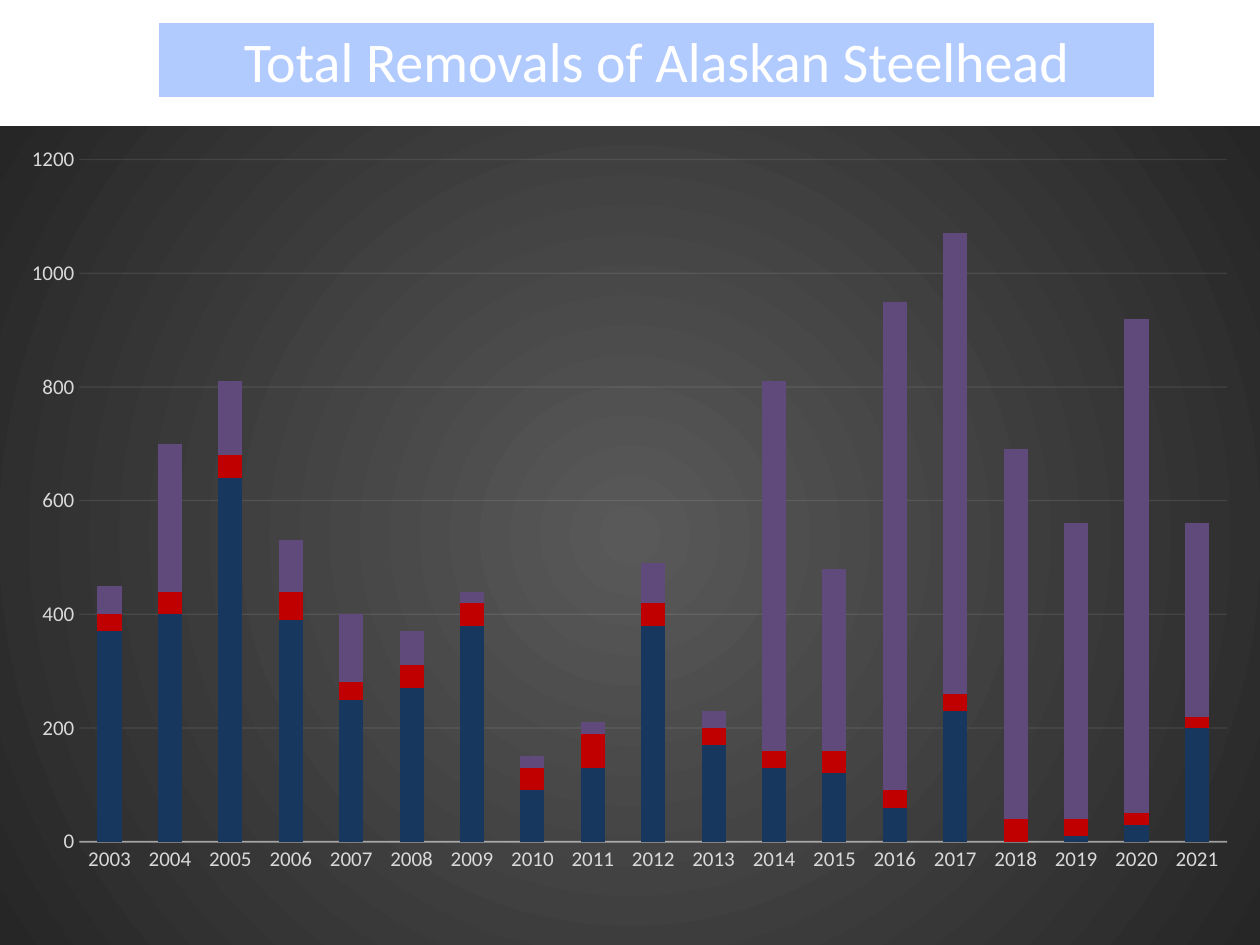
from dataclasses import dataclass

from lxml.etree import SubElement
from pptx import Presentation
from pptx.chart.axis import CategoryAxis, ValueAxis
from pptx.chart.chart import Chart
from pptx.chart.data import CategoryChartData
from pptx.dml.color import RGBColor
from pptx.dml.line import LineFormat
from pptx.enum.chart import XL_CHART_TYPE, XL_TICK_MARK
from pptx.enum.shapes import MSO_SHAPE
from pptx.enum.text import MSO_ANCHOR, PP_ALIGN
from pptx.oxml import parse_xml
from pptx.oxml.ns import nsdecls, qn
from pptx.slide import Slide
from pptx.util import Cm, Pt


@dataclass(frozen=True)
class Theme:
    font: str = "Calibri"
    title_size: float = 32
    axis_size: float = 12
    title_text: str = "FFFFFF"
    title_fill: str = "6699FF"
    axis_text: str = "D9D9D9"
    axis_line: str = "F2F2F2"
    glow_center: str = "595959"
    glow_edge: str = "262626"
    bottom_bars: str = "17375E"
    middle_bars: str = "C00000"
    top_bars: str = "604A7B"


@dataclass(frozen=True)
class BarLayer:
    color: str
    removals: tuple[int, ...]


THEME = Theme()
YEARS = range(2003, 2022)
LAYERS = (
    BarLayer(THEME.bottom_bars, (
        370, 400, 640, 390, 250, 270, 380, 90, 130, 380,
        170, 130, 120, 60, 230, 0, 10, 30, 200)),
    BarLayer(THEME.middle_bars, (
        30, 40, 40, 50, 30, 40, 40, 40, 60, 40,
        30, 30, 40, 30, 30, 40, 30, 20, 20)),
    BarLayer(THEME.top_bars, (
        50, 260, 130, 90, 120, 60, 20, 20, 20, 70,
        30, 650, 320, 860, 810, 650, 520, 870, 340)),
)


def set_opacity(element, percent: int) -> None:
    """Apply an opacity to the first RGB colour inside the element."""
    color = next(element.iter(qn("a:srgbClr")))
    SubElement(color, qn("a:alpha"), val=str(percent * 1000))


def style_line(line: LineFormat, color: str, width: float) -> None:
    line.color.rgb = RGBColor.from_string(color)
    line.width = Pt(width)


def style_axis(axis: CategoryAxis | ValueAxis) -> None:
    axis.major_tick_mark = XL_TICK_MARK.NONE
    axis.minor_tick_mark = XL_TICK_MARK.NONE
    font = axis.tick_labels.font
    font.name = THEME.font
    font.size = Pt(THEME.axis_size)
    font.color.rgb = RGBColor.from_string(THEME.axis_text)


def fill_background(chart: Chart) -> None:
    """Give the chart area a dark radial gradient."""
    chart.element.find(qn("c:chart")).addnext(parse_xml(
        f'<c:spPr {nsdecls("c", "a")}><a:gradFill><a:gsLst>'
        f'<a:gs pos="0"><a:srgbClr val="{THEME.glow_center}"/></a:gs>'
        f'<a:gs pos="100000"><a:srgbClr val="{THEME.glow_edge}"/></a:gs>'
        '</a:gsLst><a:path path="circle">'
        '<a:fillToRect l="50000" t="50000" r="50000" b="50000"/></a:path>'
        '</a:gradFill><a:ln><a:noFill/></a:ln></c:spPr>'))


def place_plot(chart: Chart, x: float, y: float, w: float, h: float) -> None:
    """Fix the inner plot area, in fractions of the chart."""
    plot_area = next(chart.element.iter(qn("c:plotArea")))
    for layout in plot_area.findall(qn("c:layout")):
        plot_area.remove(layout)
    plot_area.insert(0, parse_xml(
        f'<c:layout {nsdecls("c")}><c:manualLayout>'
        '<c:layoutTarget val="inner"/>'
        '<c:xMode val="edge"/><c:yMode val="edge"/>'
        f'<c:x val="{x}"/><c:y val="{y}"/><c:w val="{w}"/><c:h val="{h}"/>'
        '</c:manualLayout></c:layout>'))


def add_removals_chart(page: Slide) -> None:
    data = CategoryChartData()
    data.categories = [str(year) for year in YEARS]
    for layer in LAYERS:
        data.add_series("", layer.removals)
    chart = page.shapes.add_chart(
        XL_CHART_TYPE.COLUMN_STACKED,
        Cm(0), Cm(2.54), Cm(25.4), Cm(16.51), data).chart
    chart.has_title = False
    chart.has_legend = False
    chart.font.name = THEME.font
    chart.font.size = Pt(THEME.axis_size)

    plot = chart.plots[0]
    plot.gap_width = 150
    plot.overlap = 100
    plot.vary_by_categories = False
    for series, layer in zip(plot.series, LAYERS):
        series.format.fill.solid()
        series.format.fill.fore_color.rgb = RGBColor.from_string(layer.color)

    years, counts = chart.category_axis, chart.value_axis
    style_axis(years)
    style_axis(counts)
    counts.minimum_scale, counts.maximum_scale, counts.major_unit = 0, 1200, 200
    counts.format.line.fill.background()
    style_line(years.format.line, THEME.axis_line, 1)
    style_line(counts.major_gridlines.format.line, THEME.axis_line, 0.75)
    set_opacity(next(chart.element.iter(qn("c:catAx"))).find(qn("c:spPr")), 54)
    set_opacity(next(chart.element.iter(qn("c:majorGridlines"))), 10)

    fill_background(chart)
    place_plot(chart, 0.063, 0.041, 0.911, 0.833)


def add_title(page: Slide, text: str) -> None:
    box = page.shapes.add_shape(
        MSO_SHAPE.RECTANGLE, Cm(3.18), Cm(0.43), Cm(20.12), Cm(1.55))
    box.shadow.inherit = False
    box.fill.solid()
    box.fill.fore_color.rgb = RGBColor.from_string(THEME.title_fill)
    set_opacity(box.element.spPr.find(qn("a:solidFill")), 50)
    style_line(box.line, THEME.title_text, 1.5)

    frame = box.text_frame
    frame.word_wrap = True
    frame.vertical_anchor = MSO_ANCHOR.MIDDLE
    frame.margin_left = frame.margin_right = Cm(0.18)
    frame.margin_top = frame.margin_bottom = Cm(0.1)
    para = frame.paragraphs[0]
    para.text = text
    para.alignment = PP_ALIGN.CENTER
    para.font.name = THEME.font
    para.font.size = Pt(THEME.title_size)
    para.font.color.rgb = RGBColor.from_string(THEME.title_text)


def main() -> None:
    deck = Presentation()
    deck.slide_width, deck.slide_height = Cm(25.4), Cm(19.05)
    page = deck.slides.add_slide(deck.slide_layouts[6])
    add_removals_chart(page)
    add_title(page, "Total Removals of Alaskan Steelhead")
    deck.save("out.pptx")


if __name__ == "__main__":
    main()
